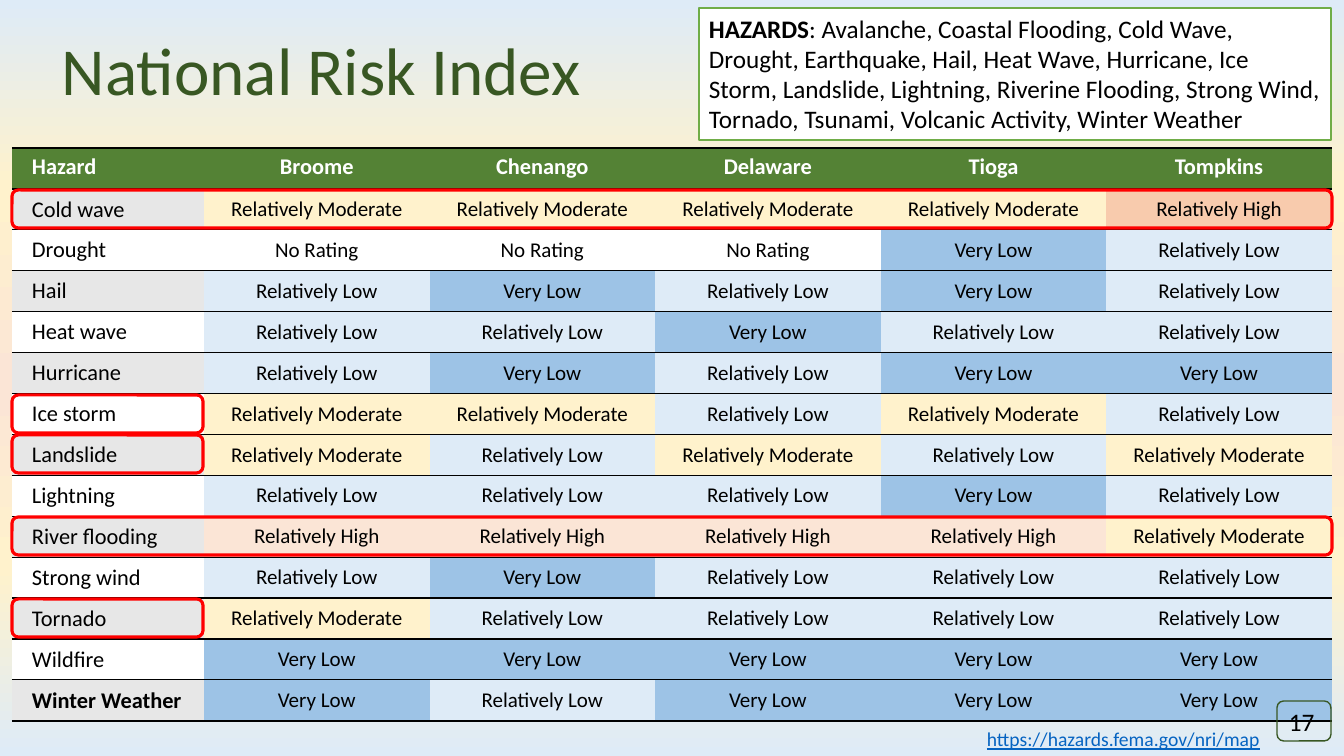
"""Build the National Risk Index slide: a hazard rating table by county with highlighted rows."""
from pptx import Presentation
from pptx.dml.color import RGBColor
from pptx.enum.shapes import MSO_SHAPE as Shape
from pptx.enum.text import MSO_ANCHOR as Anchor, PP_ALIGN as Align
from pptx.oxml import parse_xml
from pptx.oxml.ns import nsdecls, qn
from pptx.util import Pt

PX = 6858000 / 756
BLACK, WHITE, GREEN, RED = "000000", "FFFFFF", "385723", "FF0000"
SKY = [(0, "DEEBF7"), (25, "FFF2CC"), (51, "FBE5D6"), (75, "FFF2CC"), (100, "DEEBF7")]
COUNTIES = ["Broome", "Chenango", "Delaware", "Tioga", "Tompkins"]
RATINGS = {
    "N": ("No Rating", WHITE),
    "V": ("Very Low", "9DC3E6"),
    "L": ("Relatively Low", "DEEBF7"),
    "M": ("Relatively Moderate", "FFF2CC"),
    "H": ("Relatively High", "FBE5D6"),
    "X": ("Relatively High", "F8CBAD"),
}
HAZARDS = {
    "Cold wave": "MMMMX",
    "Drought": "NNNVL",
    "Hail": "LVLVL",
    "Heat wave": "LLVLL",
    "Hurricane": "LVLVV",
    "Ice storm": "MMLML",
    "Landslide": "MLMLM",
    "Lightning": "LLLVL",
    "River flooding": "HHHHM",
    "Strong wind": "LVLLL",
    "Tornado": "MLLLL",
    "Wildfire": "VVVVV",
    "Winter Weather": "VLVVV",
}
TABLE_LEFT, TABLE_TOP, TABLE_WIDTH, TABLE_HEIGHT, NAME_WIDTH = 12, 148, 1320, 573, 192
HIGHLIGHTS = {
    "Cold wave": TABLE_WIDTH,
    "Ice storm": NAME_WIDTH - 1,
    "Landslide": NAME_WIDTH - 1,
    "River flooding": TABLE_WIDTH,
    "Tornado": NAME_WIDTH - 1,
}


def px(*lengths):
    return [round(length * PX) for length in lengths]


def style(span, size, color, bold=False):
    span.font.name = "Calibri"
    span.font.size = Pt(size)
    span.font.bold = bold
    span.font.color.rgb = RGBColor.from_string(color)


deck = Presentation()
deck.slide_width, deck.slide_height = px(1344, 756)
page = deck.slides.add_slide(deck.slide_layouts[6])

backdrop = page.background.fill
backdrop.gradient()
backdrop.gradient_angle = 270
stops = page.element.find(".//" + qn("a:gsLst"))
for stop in list(stops):
    stops.remove(stop)
for percent, color in SKY:
    stops.append(parse_xml(
        f'<a:gs {nsdecls("a")} pos="{percent * 1000}"><a:srgbClr val="{color}"/></a:gs>'))

title = page.shapes.add_textbox(*px(52, 0, 1200, 148)).text_frame
title.word_wrap = True
title.vertical_anchor = Anchor.MIDDLE
title.text = "National Risk Index"
title.paragraphs[0].line_spacing = 0.9
style(title.paragraphs[0].runs[0], 48, GREEN)

rows = [("Hazard", COUNTIES)] + list(HAZARDS.items())
table = page.shapes.add_table(
    len(rows), 6, *px(TABLE_LEFT, TABLE_TOP, TABLE_WIDTH, TABLE_HEIGHT)).table
table.horz_banding = False
table.columns[0].width = px(NAME_WIDTH)[0]
for index in range(1, 6):
    table.columns[index].width = px((TABLE_WIDTH - NAME_WIDTH) / 5)[0]

for row, (name, entries) in enumerate(rows):
    header, last = row == 0, row == len(rows) - 1
    top = 2 if row <= 1 else 1
    bottom = 2 if header or last else 1
    for column, entry in enumerate([name, *entries]):
        if header:
            words, color = entry, "548235"
        elif column == 0:
            words, color = entry, "E7E7E7" if row % 2 else WHITE
        else:
            words, color = RATINGS[entry]
        cell = table.cell(row, column)
        cell.margin_left, cell.margin_right = px(20, 20)
        cell.margin_top, cell.margin_bottom = px(5, 5)
        cell.vertical_anchor = Anchor.TOP if header else Anchor.MIDDLE
        properties = cell._tc.get_or_add_tcPr()
        for side, weight in (("L", 0), ("R", 0), ("T", top), ("B", bottom)):
            paint = f'<a:solidFill><a:srgbClr val="{BLACK}"/></a:solidFill>' if weight else "<a:noFill/>"
            properties.append(parse_xml(
                f'<a:ln{side} {nsdecls("a")} w="{Pt(weight)}">{paint}</a:ln{side}>'))
        cell.fill.solid()
        cell.fill.fore_color.rgb = RGBColor.from_string(color)
        cell.text = words
        para = cell.text_frame.paragraphs[0]
        para.alignment = Align.CENTER if column else Align.LEFT
        style(para.runs[0], 16 if header or column == 0 else 15,
              WHITE if header else BLACK, header or (last and column == 0))

outlines = [(1277, 701, 54, 40, GREEN, 1, "17")]
for name, width in HIGHLIGHTS.items():
    row = list(HAZARDS).index(name) + 1
    outlines.append((TABLE_LEFT, TABLE_TOP + 1 + round(row * TABLE_HEIGHT / len(rows)),
                     width, 38, RED, 2.25, ""))
for left, top, width, height, color, weight, words in outlines:
    box = page.shapes.add_shape(Shape.ROUNDED_RECTANGLE, *px(left, top, width, height))
    box.shadow.inherit = False
    box.fill.background()
    box.line.color.rgb = RGBColor.from_string(color)
    box.line.width = Pt(weight)
    if words:
        box.text_frame.text = words
        style(box.text_frame.paragraphs[0].runs[0], 18, BLACK)

source = page.shapes.add_textbox(*px(977, 722, 300, 34)).text_frame
source.word_wrap = True
source.text = "https://hazards.fema.gov/nri/map"
address = source.paragraphs[0].runs[0]
style(address, 14, "0563C1")
address.font.underline = True

box = page.shapes.add_textbox(*px(699, 8, 632, 132))
box.fill.solid()
box.fill.fore_color.rgb = RGBColor.from_string(WHITE)
box.line.color.rgb = RGBColor.from_string("70AD47")
box.line.width = Pt(1)
box.text_frame.word_wrap = True
para = box.text_frame.paragraphs[0]
for words, bold in (
    ("HAZARDS", True),
    (": Avalanche, Coastal Flooding, Cold Wave, Drought, Earthquake, Hail, Heat Wave, "
     "Hurricane, Ice Storm, Landslide, Lightning, Riverine Flooding, Strong Wind, "
     "Tornado, Tsunami, Volcanic Activity, Winter Weather", False),
):
    span = para.add_run()
    span.text = words
    style(span, 18, BLACK, bold)

deck.save("out.pptx")
